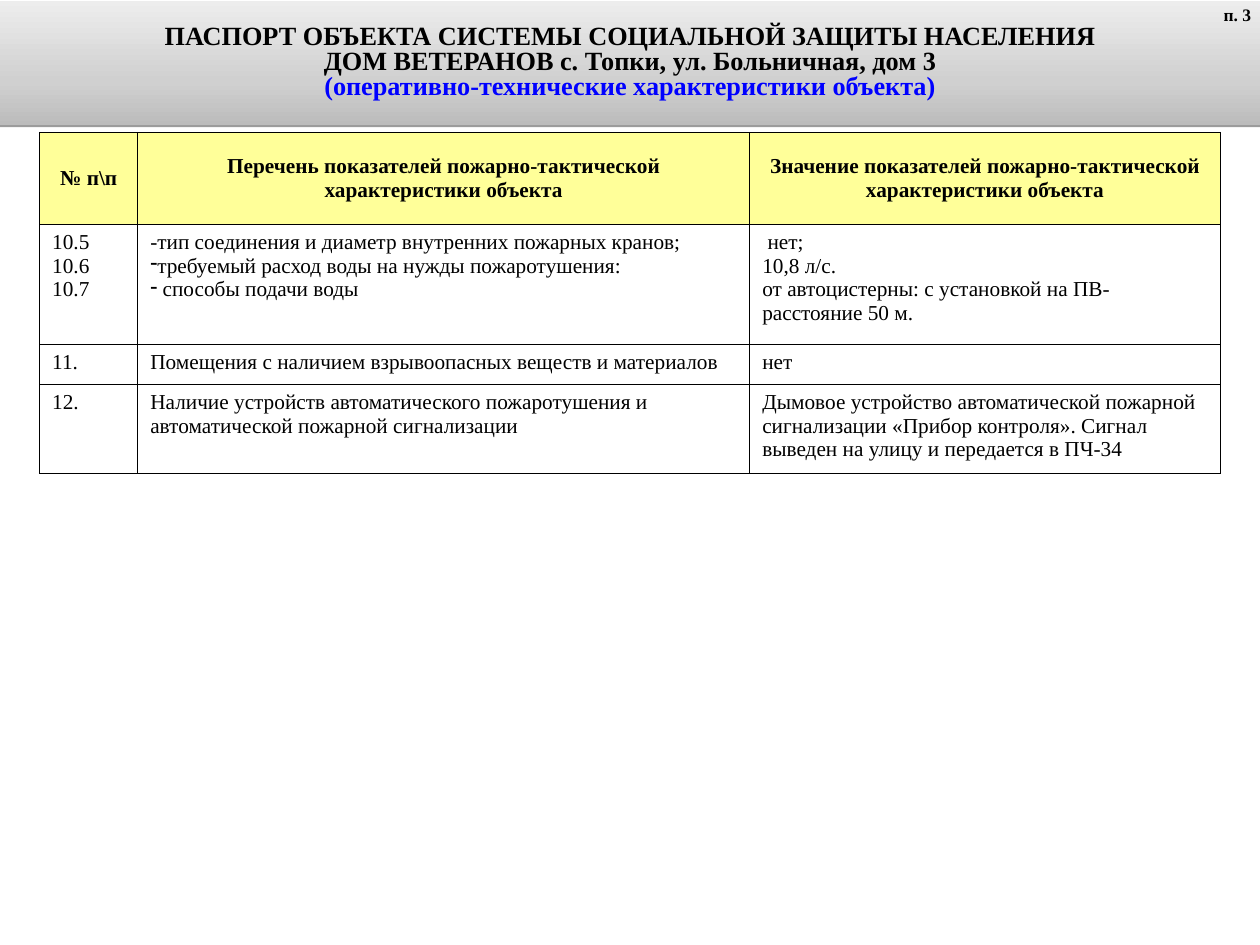
from lxml.etree import SubElement as Sub
from pptx import Presentation
from pptx.dml.color import RGBColor as Rgb
from pptx.enum.text import MSO_ANCHOR as Anchor, MSO_AUTO_SIZE as Fit, PP_ALIGN as Align
from pptx.oxml.ns import qn
from pptx.util import Inches, Pt

THEME = {
    "font": "Times New Roman",
    "ink": "000000", "blue": "0000FF", "head": "FFFF99", "body": "FFFFFF",
    "fade": ((0, "BCBCBC"), (35, "D0D0D0"), (100, "EDEDED")),
    "title": 21, "cell": 17, "page": 14,
}
UNIT = Inches(1)
WIDE, HIGH = 14, 10.5
COLS = (1.09, 6.8, 5.23)
ROWS = (1.02, 1.34, 0.44, 0.99)
DASH = "•"

TITLE = (
    ("ПАСПОРТ ОБЪЕКТА СИСТЕМЫ СОЦИАЛЬНОЙ ЗАЩИТЫ НАСЕЛЕНИЯ", "ink"),
    ("ДОМ ВЕТЕРАНОВ с. Топки, ул. Больничная, дом 3", "ink"),
    ("(оперативно-технические характеристики объекта)", "blue"),
)
CELLS = (
    (("№ п\\п",),
     ("Перечень показателей пожарно-тактической характеристики объекта",),
     ("Значение показателей пожарно-тактической характеристики объекта",)),
    (("10.5", "10.6", "10.7"),
     ("-тип соединения и диаметр внутренних пожарных кранов;",
      DASH + "требуемый расход воды на нужды пожаротушения:",
      DASH + " способы подачи воды"),
     (" нет;", "10,8 л/с.", "от автоцистерны: с установкой на ПВ- расстояние 50 м.")),
    (("11.",),
     ("Помещения с наличием взрывоопасных веществ и материалов",),
     ("нет",)),
    (("12.",),
     ("Наличие устройств автоматического пожаротушения и автоматической пожарной сигнализации",),
     ("Дымовое устройство автоматической пожарной сигнализации «Прибор контроля». "
      "Сигнал выведен на улицу и передается в ПЧ-34",)),
)


def grid(num):
    """Turn grid units into a length."""
    return int(num * UNIT)


def apply(item, vals):
    """Set each attribute in a dict of format values."""
    for key, val in vals.items():
        setattr(item, key, val)


def place(left, top, width, height):
    """Give a position and size in grid units as a dict."""
    return dict(zip(("left", "top", "width", "height"), map(grid, (left, top, width, height))))


def pad(side, top):
    """Give the four margins as a dict."""
    return {"margin_left": grid(side), "margin_right": grid(side),
            "margin_top": grid(top), "margin_bottom": grid(top)}


def tint(node, code, alpha=None):
    """Add a plain colour to an XML node."""
    clr = Sub(node, qn("a:srgbClr"), val=code)
    if alpha:
        Sub(clr, qn("a:alpha"), val=str(alpha * 1000))


def write(frame, lines, size, bold, **form):
    """Fill a text frame with (text, colour) lines."""
    for num, (text, color) in enumerate(lines):
        para = frame.add_paragraph() if num else frame.paragraphs[0]
        apply(para, form)
        if text.startswith(DASH):
            Sub(para._p.get_or_add_pPr(), qn("a:buChar"), char="-")
        run = para.add_run()
        run.text = text.removeprefix(DASH)
        apply(run.font, {"name": THEME["font"], "size": Pt(THEME[size]), "bold": bold})
        run.font.color.rgb = Rgb.from_string(THEME[color])


def shade(shape):
    """Give a shape the grey fade and a thin shadow below."""
    props = shape._element.spPr
    fade = Sub(props, qn("a:gradFill"), rotWithShape="1")
    stops = Sub(fade, qn("a:gsLst"))
    for pos, code in THEME["fade"]:
        tint(Sub(stops, qn("a:gs"), pos=str(pos * 1000)), code)
    Sub(fade, qn("a:lin"), ang=str(270 * 60000), scaled="1")
    shadow = Sub(Sub(props, qn("a:effectLst")), qn("a:outerShdw"),
                 dist=str(Pt(1.6)), dir=str(90 * 60000), rotWithShape="0")
    tint(shadow, THEME["ink"], 38)


def banner(slide):
    """Format the title as a band across the top."""
    title = slide.shapes.title
    apply(title, place(0, 0.01, WIDE, 1.38))
    shade(title)
    frame = title.text_frame
    apply(frame, {"word_wrap": True, "auto_size": Fit.NONE,
                  "vertical_anchor": Anchor.MIDDLE, **pad(0.12, 0.06)})
    write(frame, TITLE, "title", True, alignment=Align.CENTER, line_spacing=0.8)


def border(cell):
    """Draw a thin line on all four sides of a cell."""
    props = cell._tc.get_or_add_tcPr()
    for side in "LRTB":
        line = Sub(props, qn("a:ln" + side), w=str(Pt(1)))
        tint(Sub(line, qn("a:solidFill")), THEME["ink"])


def fill(cell, lines, head):
    """Format one cell and write its lines."""
    apply(cell, {"vertical_anchor": Anchor.MIDDLE if head else Anchor.TOP, **pad(0.14, 0.07)})
    border(cell)
    cell.fill.solid()
    cell.fill.fore_color.rgb = Rgb.from_string(THEME["head" if head else "body"])
    write(cell.text_frame, [(text, "ink") for text in lines], "cell", head,
          alignment=Align.CENTER if head else Align.LEFT)


def chart(slide):
    """Add the table of fire safety features."""
    spot = place(0.44, 1.47, sum(COLS), sum(ROWS))
    table = slide.shapes.add_table(len(ROWS), len(COLS), **spot).table
    apply(table, {"first_row": False, "horz_banding": False})
    for col, width in zip(table.columns, COLS):
        col.width = grid(width)
    for num, (row, height) in enumerate(zip(table.rows, ROWS)):
        row.height = grid(height)
        for cell, lines in zip(row.cells, CELLS[num]):
            fill(cell, lines, num == 0)


def label(slide):
    """Add the page mark in the top right corner."""
    frame = slide.shapes.add_textbox(**place(WIDE - 0.79, 0, 0.79, 0.33)).text_frame
    frame.word_wrap = True
    write(frame, [("п. 3", "ink")], "page", True, alignment=Align.RIGHT)


def main():
    """Build and save the slide."""
    deck = Presentation()
    apply(deck, {"slide_width": grid(WIDE), "slide_height": grid(HIGH)})
    slide = deck.slides.add_slide(deck.slide_layouts[5])
    chart(slide)
    banner(slide)
    label(slide)
    deck.save("out.pptx")


if __name__ == "__main__":
    main()
